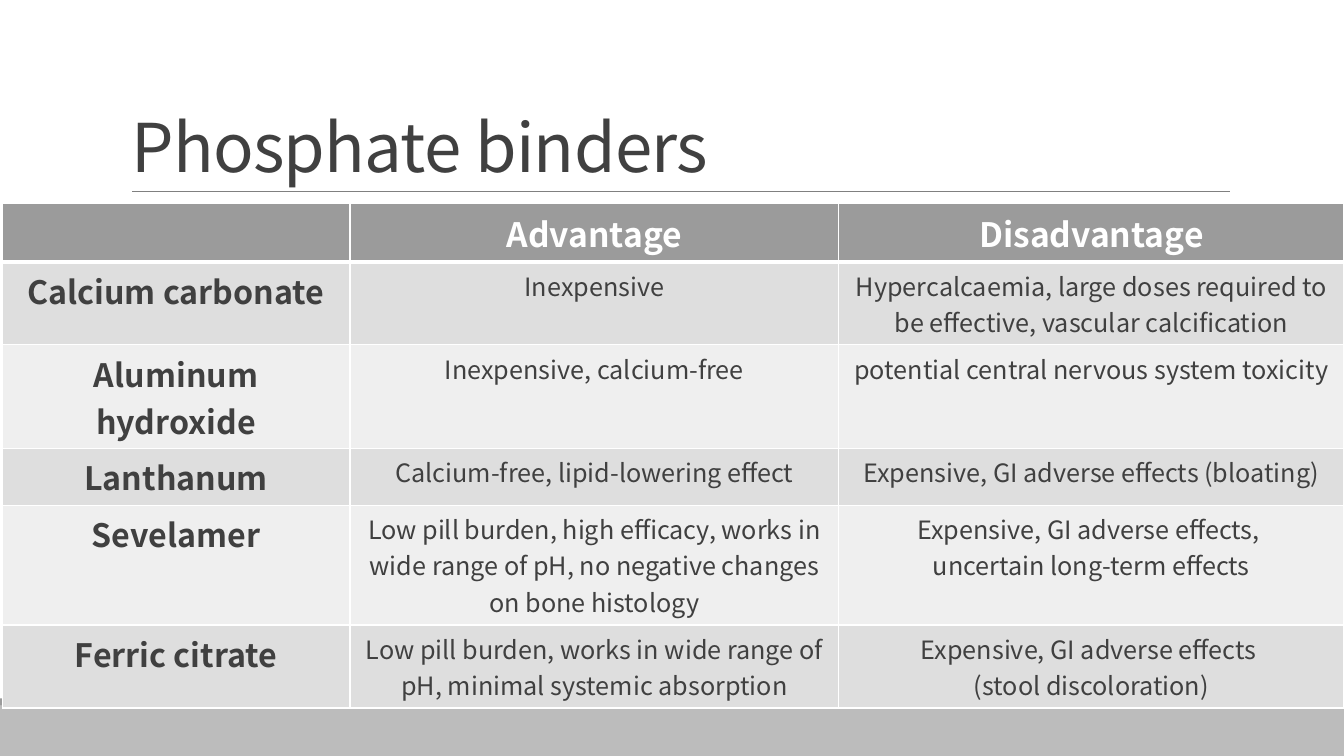
from lxml import etree
from pptx import Presentation
from pptx.dml.color import RGBColor
from pptx.enum.shapes import MSO_CONNECTOR, MSO_SHAPE
from pptx.enum.text import MSO_ANCHOR, PP_ALIGN
from pptx.oxml.ns import qn
from pptx.util import Cm, Pt

FONT = "Noto Sans CJK SC"
RECT = MSO_SHAPE.RECTANGLE
LINE = MSO_CONNECTOR.STRAIGHT
BOTTOM = MSO_ANCHOR.BOTTOM
CENTER = PP_ALIGN.CENTER
WIDE, HIGH = 33.87, 19.05
DARK, GRAY, WHITE = "404040", "9B9B9B", "FFFFFF"
BANDS = ["DEDEDE", "EFEFEF"]


def color(code):
    return RGBColor.from_string(code)


def write(par, text, size, code, bold=False):
    """Add text to a paragraph, with a line break at each newline."""
    for num, part in enumerate(text.split("\n")):
        if num:
            par.add_line_break()
        run = par.add_run()
        run.text = part
        run.font.name = FONT
        run.font.size = Pt(size)
        run.font.bold = bold
        run.font.color.rgb = color(code)


deck = Presentation()
deck.slide_width, deck.slide_height = Cm(WIDE), Cm(HIGH)
slide = deck.slides.add_slide(deck.slide_layouts[6])
shapes = slide.shapes

# Footer bands
for top, tall, code in [(17.78, 1.27, "BCBCBC"), (17.6, 0.18, GRAY)]:
    band = shapes.add_shape(RECT, 0, Cm(top), Cm(WIDE), Cm(tall))
    band.shadow.inherit = False
    band.fill.solid()
    band.fill.fore_color.rgb = color(code)
    band.line.fill.background()

# Title and its rule
rule = shapes.add_connector(LINE, Cm(3.33), Cm(4.83), Cm(31), Cm(4.83))
rule.line.color.rgb = color("808080")
rule.line.width = Pt(0.5)
etree.SubElement(rule._element.spPr, qn("a:effectLst"))

title = shapes.add_textbox(Cm(3.06), Cm(0.79), Cm(27.94), Cm(4.04))
frame = title.text_frame
frame.word_wrap = True
frame.vertical_anchor = BOTTOM
par = frame.paragraphs[0]
par.line_spacing = 0.85
write(par, "Phosphate binders", 48, DARK)
par.runs[0].font._element.set("spc", "-50")

# Table of binders
rows = [
    ("", "Advantage", "Disadvantage"),
    ("Calcium carbonate", "Inexpensive",
     "Hypercalcaemia, large doses required to be effective, "
     "vascular calcification"),
    ("Aluminum hydroxide", "Inexpensive, calcium-free",
     "potential central nervous system toxicity"),
    ("Lanthanum", "Calcium-free, lipid-lowering effect",
     "Expensive, GI adverse effects (bloating)"),
    ("Sevelamer",
     "Low pill burden, high efficacy, works in wide range of pH, "
     "no negative changes on bone histology",
     "Expensive, GI adverse effects, \nuncertain long-term effects"),
    ("Ferric citrate",
     "Low pill burden, works in wide range of pH, "
     "minimal systemic absorption",
     "Expensive, GI adverse effects \n(stool discoloration)"),
]
widths = [8.76, 12.32, 12.73]
heights = [1.47, 2.09, 2.61, 1.43, 3.02, 2.09]
grid = shapes.add_table(len(rows), len(widths), Cm(0.06), Cm(5.13),
                        Cm(sum(widths)), Cm(sum(heights))).table
for col, width in zip(grid.columns, widths):
    col.width = Cm(width)
for row, height in zip(grid.rows, heights):
    row.height = Cm(height)

for r, texts in enumerate(rows):
    for c, text in enumerate(texts):
        cell = grid.cell(r, c)
        props = cell._tc.get_or_add_tcPr()
        for side in ("lnL", "lnR", "lnT", "lnB"):
            thick = (r, side) in [(0, "lnB"), (1, "lnT")]
            edge = etree.SubElement(props, qn("a:" + side),
                                    w=str(Pt(3 if thick else 1)))
            fill = etree.SubElement(edge, qn("a:solidFill"))
            etree.SubElement(fill, qn("a:srgbClr"), val=WHITE)
        cell.fill.solid()
        cell.fill.fore_color.rgb = color(BANDS[(r - 1) % 2] if r else GRAY)
        par = cell.text_frame.paragraphs[0]
        par.alignment = CENTER
        if r == 0:
            size, code = 24, WHITE
        else:
            size, code = (18 if c else 23), DARK
        if text:
            write(par, text, size, code, bold=r == 0 or c == 0)

deck.save("out.pptx")
